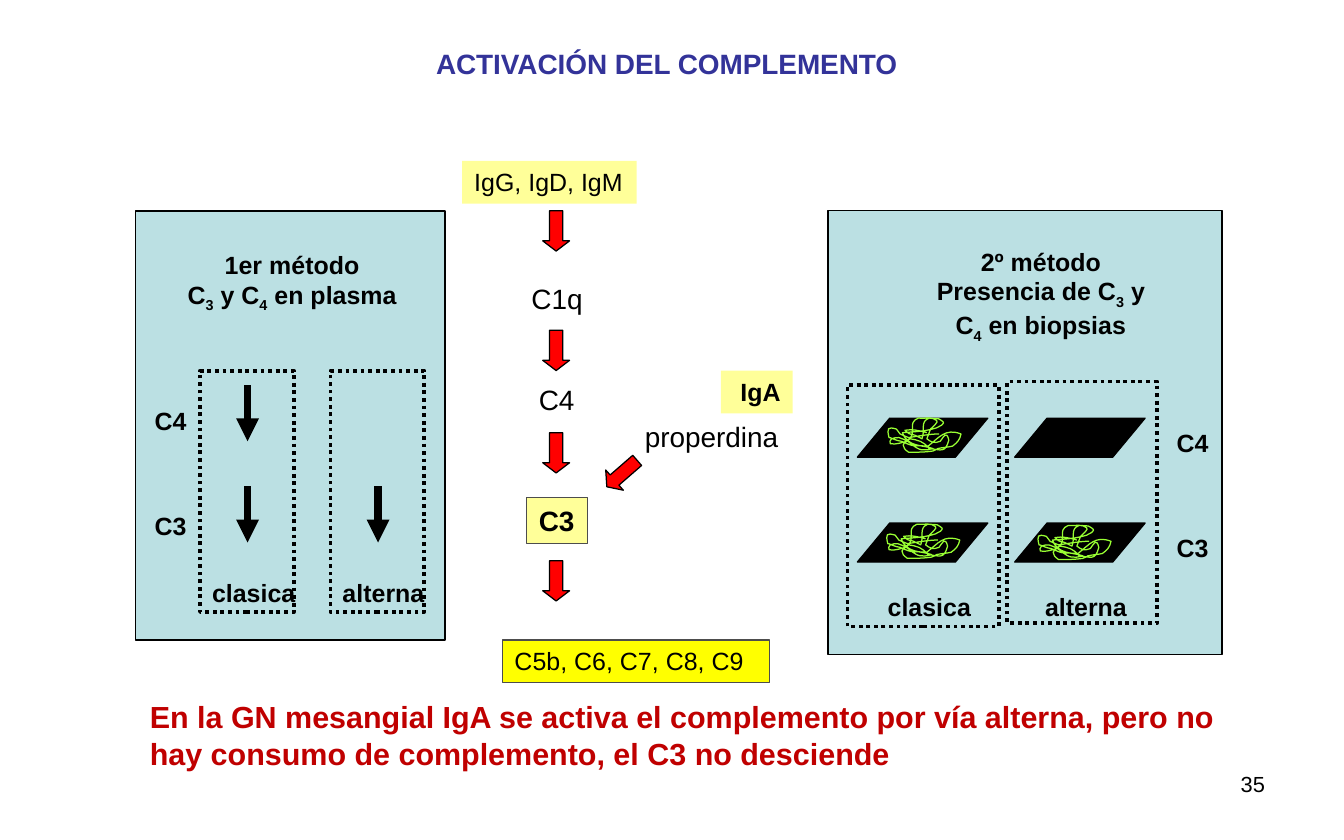
"""Build the slide on complement activation and its two study methods."""
from itertools import product

from lxml.etree import SubElement
from pptx import Presentation
from pptx.dml.color import RGBColor
from pptx.enum.dml import MSO_LINE
from pptx.enum.shapes import MSO_CONNECTOR, MSO_SHAPE
from pptx.enum.text import MSO_ANCHOR, PP_ALIGN
from pptx.oxml.ns import qn
from pptx.util import Inches, Pt

COLORS = {"panel": "BBE0E3", "pale": "FFFF99", "yellow": "FFFF00",
          "red": "FF0000", "green": "99FF33", "black": "000000",
          "gray": "4D4D4D", "title": "333399", "conclusion": "C00000"}
LEFT, CENTER, RIGHT = PP_ALIGN.LEFT, PP_ALIGN.CENTER, PP_ALIGN.RIGHT
SMALL, MEDIUM, LARGE = 14.7, 16.5, 18

PANELS = [(6.79, 1.73, 3.23, 3.64), (1.11, 1.73, 2.54, 3.52)]
CASCADE_BOXES = [
    ("C3", (4.32, 4.08, 0.5, 0.38), MEDIUM, True, LEFT, "pale", "gray"),
    ("C5b, C6, C7, C8, C9", (4.12, 5.25, 2.19, 0.35), SMALL, False, LEFT, "yellow", "gray"),
    ("IgG, IgD, IgM", (3.79, 1.32, 1.43, 0.35), SMALL, False, LEFT, "pale", None),
    ("IgA", (5.91, 3.04, 0.59, 0.35), SMALL, True, RIGHT, "pale", None),
]
CASCADE_LABELS = [("C1q", (4.26, 2.26, 0.63, 0.38)), ("C4", (4.32, 3.09, 0.5, 0.38)),
                  ("properdina", (5.19, 3.39, 1.32, 0.38))]
CASCADE_ARROWS = [(4.45, 1.73, 0), (4.45, 2.71, 0), (4.45, 3.55, 0),
                  (4.45, 4.6, 0), (4.99, 3.72, 49)]
METHODS = [(["1er método", "C_3 y C_4 en plasma"], (1.42, 2, 1.95, 0.6)),
           (["2º método", "Presencia de C_3 y C_4 en biopsias"], (7.5, 1.97, 2.07, 0.84))]
PATHWAYS = ["clasica", "alterna"]
FRACTIONS = ["C4", "C3"]
ROW_STEP = 0.86

PLASMA_X, PLASMA_STEP, PLASMA_Y = 1.64, 1.07, 3.04
FALLS = [(0, 3.16), (0, 3.99), (1, 3.99)]
BIOPSY_X, BIOPSY_STEP = 7.03, 1.29
BIOPSY_FRAMES = [(6.95, 3.16, 1.24, 1.98), (8.26, 3.13, 1.23, 1.98)]
DEPOSITS = [(7.27, 3.41), (7.26, 4.28), (8.5, 4.29)]

DEPOSIT_SIZE = (61, 30)
DEPOSIT_START = (33, 14)
DEPOSIT_CURVES = [
    (26, 12, 21, 11, 15, 12), (20, 16, 16, 14, 23, 16), (25, 17, 29, 19, 29, 19),
    (32, 11, 27, 5, 35, 2), (38, 3, 42, 1, 45, 4), (50, 7, 42, 9, 41, 10),
    (31, 13, 25, 13, 13, 14), (17, 26, 30, 24, 38, 27), (30, 29, 27, 29, 20, 23),
    (17, 20, 10, 18, 10, 18), (8, 18, 6, 18, 4, 19), (3, 20, 2, 22, 3, 23),
    (8, 24, 12, 22, 17, 21), (26, 14, 16, 6, 26, 2), (31, 3, 37, 0, 41, 4),
    (43, 5, 38, 9, 36, 11), (35, 14, 34, 16, 33, 19), (37, 22, 39, 23, 44, 21),
    (47, 17, 49, 12, 51, 20), (48, 31, 45, 28, 35, 27), (30, 21, 26, 20, 19, 19),
    (12, 22, 12, 26, 18, 30), (25, 30, 32, 30, 38, 29), (40, 29, 41, 27, 42, 27),
    (46, 26, 50, 26, 54, 25), (58, 22, 60, 20, 61, 15), (48, 10, 43, 18, 34, 25),
    (17, 24, 24, 26, 12, 21), (10, 21, 8, 20, 5, 19), (4, 18, 2, 18, 2, 18),
    (0, 10, 1, 9, 8, 11), (9, 12, 10, 14, 11, 15), (13, 16, 18, 18, 18, 18),
    (25, 17, 35, 15, 43, 15)]


def color(name):
    return RGBColor.from_string(COLORS[name])


def paint(sp, fill=None, line=None, width=0.75):
    sp.shadow.inherit = False
    if fill:
        sp.fill.solid()
        sp.fill.fore_color.rgb = color(fill)
    else:
        sp.fill.background()
    if line:
        sp.line.color.rgb = color(line)
        sp.line.width = Pt(width)
    else:
        sp.line.fill.background()


def add_shape(s, kind, box, fill=None, line="black", width=0.75):
    sp = s.shapes.add_shape(kind, *map(Inches, box))
    paint(sp, fill, line, width)
    return sp


def write(sp, lines, size, bold=False, align=LEFT, ink="black"):
    tf = sp.text_frame
    tf.word_wrap = align != LEFT or sp.width > Inches(1.5)
    tf.vertical_anchor = MSO_ANCHOR.TOP
    tf.margin_left = tf.margin_right = Inches(0.1)
    tf.margin_top = tf.margin_bottom = Inches(0.05)
    for i, line in enumerate(lines):
        p = tf.add_paragraph() if i else tf.paragraphs[0]
        p.alignment = align
        p.font.name, p.font.size, p.font.bold = "Arial", Pt(size), bold
        p.font.color.rgb = color(ink)
        plain, *rest = line.split("_")
        p.add_run().text = plain
        for part in rest:
            r = p.add_run()
            r.text = part[0]
            r._r.get_or_add_rPr().set("baseline", "-25000")
            p.add_run().text = part[1:]


def add_text(s, lines, box, size=SMALL, bold=True, align=LEFT, ink="black"):
    write(s.shapes.add_textbox(*map(Inches, box)), lines, size, bold, align, ink)


def add_dotted_frame(s, box):
    sp = add_shape(s, MSO_SHAPE.RECTANGLE, box, width=2.25)
    sp.line.dash_style = MSO_LINE.ROUND_DOT


def add_fall(s, x, y):
    c = s.shapes.add_connector(MSO_CONNECTOR.STRAIGHT, *map(Inches, (x, y, x, y + 0.46)))
    c.line.color.rgb = color("black")
    c.line.width = Pt(4.5)
    SubElement(c.line._get_or_add_ln(), qn("a:tailEnd"), type="triangle")
    SubElement(c._element.spPr, qn("a:effectLst"))


def add_deposit(s, left, top):
    width, height = DEPOSIT_SIZE
    builder = s.shapes.build_freeform(0, 0, Inches(0.01))
    builder.add_line_segments([DEPOSIT_SIZE], close=False)
    sp = builder.convert_to_shape(Inches(left), Inches(top))
    outline = next(sp._element.iter(qn("a:path")))
    for child in list(outline):
        outline.remove(child)
    outline.set("w", str(width))
    outline.set("h", str(height))
    for tag, values in [("a:moveTo", DEPOSIT_START),
                        *(("a:cubicBezTo", curve) for curve in DEPOSIT_CURVES)]:
        segment = SubElement(outline, qn(tag))
        for x, y in zip(values[::2], values[1::2]):
            SubElement(segment, qn("a:pt"), x=str(x), y=str(y))
    paint(sp, line="green")


def add_cascade(s):
    for text, box, size, bold, align, fill, line in CASCADE_BOXES:
        write(add_shape(s, MSO_SHAPE.RECTANGLE, box, fill, line), [text], size, bold, align)
    for text, box in CASCADE_LABELS:
        add_text(s, [text], box, MEDIUM, False)
    for x, y, angle in CASCADE_ARROWS:
        sp = add_shape(s, MSO_SHAPE.DOWN_ARROW, (x, y, 0.22, 0.33), "red")
        sp.adjustments[0], sp.adjustments[1] = 0.5, 0.38
        sp.rotation = angle


def add_plasma(s):
    for column, y in FALLS:
        add_fall(s, PLASMA_X + 0.39 + column * PLASMA_STEP, y)
    for i, name in enumerate(PATHWAYS):
        x = PLASMA_X + i * PLASMA_STEP
        add_text(s, [name], (x, 4.69, 0.89, 0.35))
        add_dotted_frame(s, (x, PLASMA_Y, 0.77, 1.98))


def add_biopsy(s):
    for row, column in product(range(2), range(2)):
        box = (BIOPSY_X + column * BIOPSY_STEP, 3.43 + row * ROW_STEP, 1.07, 0.32)
        sp = add_shape(s, MSO_SHAPE.PARALLELOGRAM, box, "black")
        sp.adjustments[0] = 0.83
    for i, name in enumerate(PATHWAYS):
        add_dotted_frame(s, BIOPSY_FRAMES[i])
        add_text(s, [name], (7.18 + i * BIOPSY_STEP, 4.8, 0.89, 0.35))
    for left, top in DEPOSITS:
        add_deposit(s, left, top)


def main():
    prs = Presentation()
    prs.slide_width, prs.slide_height = Inches(11.02), Inches(6.89)
    s = prs.slides.add_slide(prs.slide_layouts[6])
    for box in PANELS:
        add_shape(s, MSO_SHAPE.RECTANGLE, box, "panel")
    add_cascade(s)
    for lines, box in METHODS:
        add_text(s, lines, box, align=CENTER)
    add_plasma(s)
    add_biopsy(s)
    for (x, y), (row, name) in product([(1.17, 3.28), (9.55, 3.46)], enumerate(FRACTIONS)):
        add_text(s, [name], (x, y + row * ROW_STEP, 0.46, 0.35))
    add_text(s, ["ACTIVACIÓN DEL COMPLEMENTO"], (3.39, 0.33, 4.15, 0.38),
             MEDIUM, align=CENTER, ink="title")
    add_text(s, ["En la GN mesangial IgA se activa el complemento por vía alterna, pero no",
                 "hay consumo de complemento, el C3 no desciende"],
             (1.13, 5.68, 9.01, 0.71), LARGE, ink="conclusion")
    add_text(s, ["35"], (7.9, 6.27, 2.57, 0.48), 12.9, False, RIGHT)
    prs.save("out.pptx")


if __name__ == "__main__":
    main()
